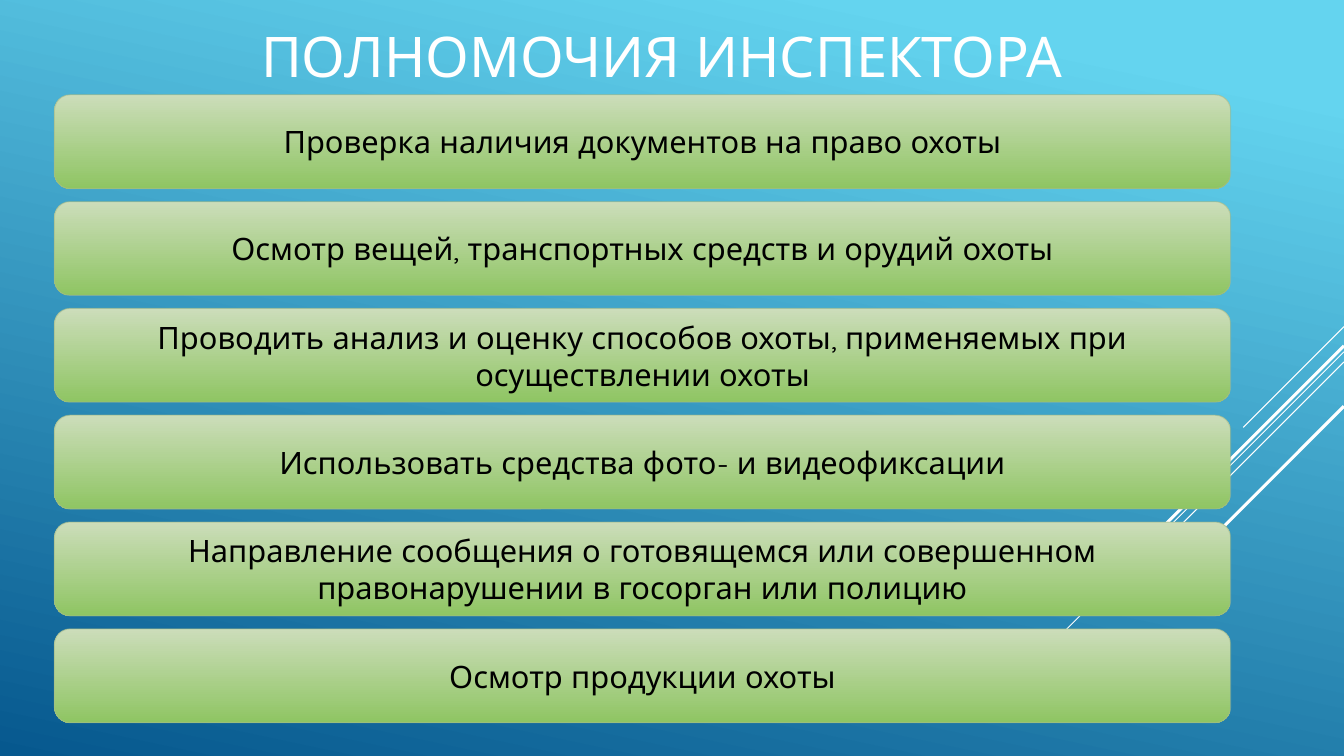
from pptx import Presentation
from pptx.dml.color import RGBColor
from pptx.enum.shapes import MSO_CONNECTOR, MSO_SHAPE
from pptx.enum.text import MSO_ANCHOR, MSO_AUTO_SIZE, PP_ALIGN
from pptx.oxml import parse_xml
from pptx.oxml.ns import nsdecls, qn
from pptx.util import Pt

WHITE = RGBColor(0xFF, 0xFF, 0xFF)
BLACK = RGBColor(0x00, 0x00, 0x00)
SKY = RGBColor(0x64, 0xD4, 0xEF)
DEEP_BLUE = RGBColor(0x06, 0x58, 0x8E)
PALE_GREEN = RGBColor(0xCC, 0xDD, 0xBA)
GREEN = RGBColor(0x8F, 0xC5, 0x63)
BORDER = RGBColor(0xA4, 0xBB, 0x8B)
FONT = "Quicksand"
WIDTH, HEIGHT = 960, 540

POWERS = [
    "Проверка наличия документов на право охоты",
    "Осмотр вещей, транспортных средств и орудий охоты",
    "Проводить анализ и оценку способов охоты, применяемых при осуществлении охоты",
    "Использовать средства фото- и видеофиксации",
    "Направление сообщения о готовящемся или совершенном правонарушении в госорган или полицию",
    "Осмотр продукции охоты",
]
STRIPES = [(233.3, 72, 0.75), (251.3, 234.7, 0.75), (258.5, 149, 0.75),
           (247, 137.2, 2.25), (290.2, 100, 2.25)]


def write(tf, text, size=22, color=BLACK, align=PP_ALIGN.CENTER):
    """Put one formatted, vertically centred paragraph in a text frame."""
    tf.word_wrap = True
    tf.auto_size = MSO_AUTO_SIZE.NONE
    tf.vertical_anchor = MSO_ANCHOR.MIDDLE
    p = tf.paragraphs[0]
    p.alignment = align
    r = p.add_run()
    r.text = text
    r.font.name, r.font.size, r.font.color.rgb = FONT, Pt(size), color


def shade(fill, start, end, angle, offset=0):
    """Apply a two-colour gradient running clockwise by the given angle."""
    fill.gradient()
    fill.gradient_angle = 360 - angle
    first, last = fill.gradient_stops
    first.color.rgb, first.position = start, offset
    last.color.rgb, last.position = end, 1


def add_stripes(s, right):
    """Draw the diagonal stripes running down from the right edge."""
    for y, run, weight in STRIPES:
        line = s.shapes.add_connector(MSO_CONNECTOR.STRAIGHT, Pt(right), Pt(y),
                                      Pt(right - run), Pt(y + run))
        line.line.color.rgb = WHITE
        line.line.width = Pt(weight)
        line._element.spPr.append(parse_xml(f"<a:effectLst {nsdecls('a')}/>"))


def add_title(s, left, top, width, height):
    """Place the heading in the title placeholder."""
    sp = s.shapes.title
    sp.left, sp.top, sp.width, sp.height = map(Pt, (left, top, width, height))
    write(sp.text_frame, "ПОЛНОМОЧИЯ ИНСПЕКТОРА", size=40, color=WHITE)


def add_powers(s, left, top, width, height, bar=67):
    """Stack the bars evenly within the box."""
    pitch = (height - bar) / (len(POWERS) - 1)
    for i, text in enumerate(POWERS):
        sp = s.shapes.add_shape(MSO_SHAPE.ROUNDED_RECTANGLE, Pt(left),
                                Pt(top + i * pitch), Pt(width), Pt(bar))
        sp.shadow.inherit = False
        shade(sp.fill, PALE_GREEN, GREEN, 90)
        sp.line.color.rgb = BORDER
        sp.line.width = Pt(0.75)
        rgb = sp.line._ln.find(".//" + qn("a:srgbClr"))
        rgb.append(parse_xml(f'<a:alpha {nsdecls("a")} val="60000"/>'))
        write(sp.text_frame, text)


def main():
    """Build the slide and save it."""
    prs = Presentation()
    prs.slide_width, prs.slide_height = Pt(WIDTH), Pt(HEIGHT)
    s = prs.slides.add_slide(prs.slide_layouts[5])
    shade(s.background.fill, SKY, DEEP_BLUE, 102, offset=0.1)
    add_stripes(s, WIDTH)
    add_title(s, 78.5, 11.5, 788.4, 56.2)
    add_powers(s, 38.9, 67.7, 840.2, 448.5)
    prs.save("out.pptx")


if __name__ == "__main__":
    main()
